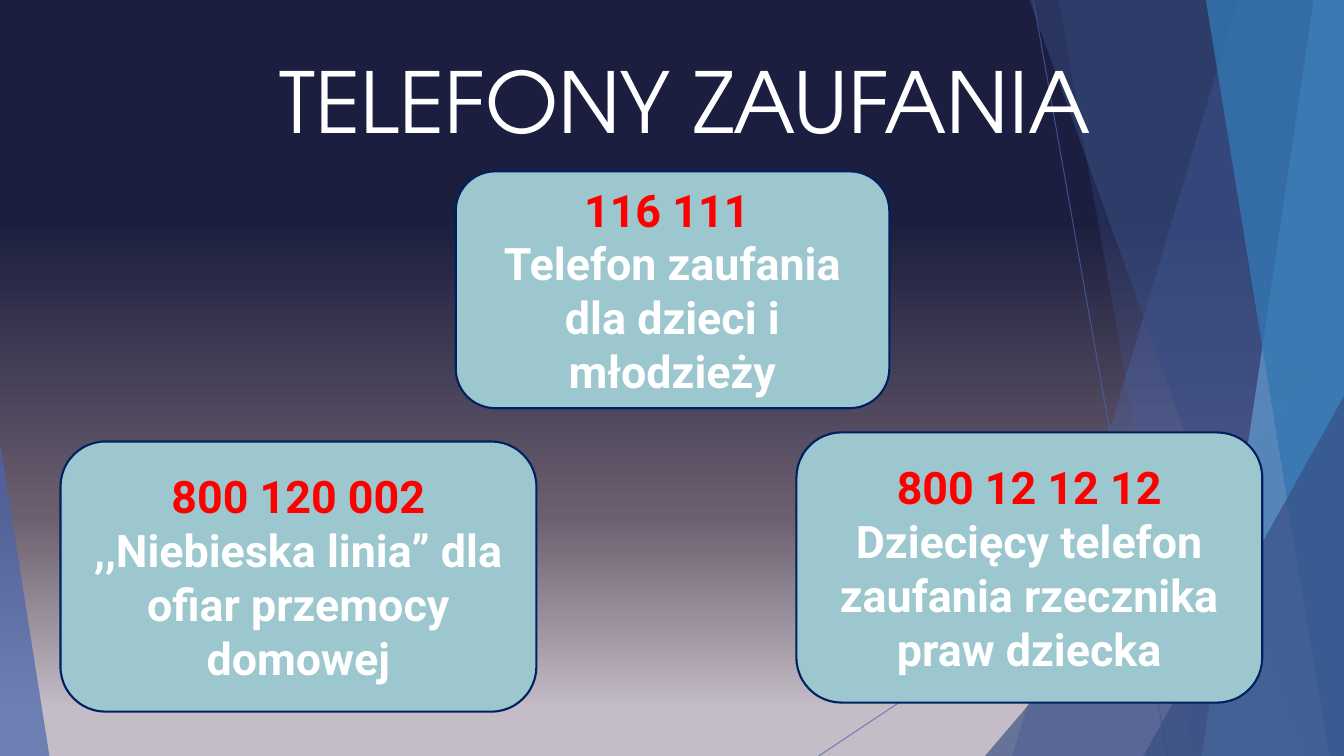
from copy import deepcopy

from lxml.etree import SubElement
from pptx import Presentation
from pptx.dml.color import RGBColor
from pptx.enum.shapes import MSO_CONNECTOR, MSO_SHAPE
from pptx.enum.text import MSO_ANCHOR, MSO_AUTO_SIZE, PP_ALIGN
from pptx.oxml.ns import qn
from pptx.util import Inches, Pt

TITLE = "TELEFONY ZAUFANIA"
TITLE_AREA = (4.65, 5.87, 92.65, 14.8)
HELPLINES = [
    ("116 111 ", "Telefon zaufania dla dzieci i młodzieży", (33.91, 22.67, 32.26, 31.33)),
    ("800 12 12 12", "Dziecięcy telefon zaufania rzecznika praw dziecka", (59.26, 57.2, 34.66, 35.73)),
    ("800 120 002", ",,Niebieska linia” dla ofiar przemocy domowej", (4.5, 58.4, 35.41, 35.73)),
]

BACKGROUND = [(0.06, "C4BCC6"), (0.32, "6B5E6E"), (0.71, "1B1E3E")]
BLUE, NAVY, SKY, OCEAN = "4A66AC", "384C81", "629DD1", "3477B2"
THIN_LINES = [(76.89, 0, 86.87, 100), (100, 53.73, 60.92, 100)]
DECORATIONS = [
    ("panel", (92.12, 75.32), BLUE, 36),
    ("panel", (78.77, 88.75), BLUE, 20),
    ("triangle", (73.29, 44.4, 26.71, 55.6, 1), NAVY, 66),
    ("panel", (76.59, 96.85), NAVY, 50),
    ("panel", (97.75, 89.42), SKY, 70),
    ("panel", (89.72, 98.87), OCEAN, 80),
    ("triangle", (85.07, 52.4, 14.93, 47.6, 1), NAVY, 66),
    ("triangle", (0, 58.53, 3.68, 41.47, 0), BLUE, 70),
]
TITLE_FONT = {"name": "TeX Gyre Adventor", "size": Pt(60)}
CARD_FONT = {"name": "Roboto", "size": Pt(32), "bold": True}

presentation = Presentation()
presentation.slide_width = Inches(13.33)
presentation.slide_height = Inches(7.5)
slide = presentation.slides.add_slide(presentation.slide_layouts[6])
shapes = slide.shapes


def place(*shares):
    sides = (presentation.slide_width, presentation.slide_height)
    return [round(share * sides[index % 2] / 100) for index, share in enumerate(shares)]


def color(hex_string):
    return RGBColor.from_string(hex_string)


def set_alpha(element, percent):
    for tone in element.spPr.iter(qn("a:srgbClr")):
        SubElement(tone, qn("a:alpha"), val=str(percent * 1000))


def paint(shape, fill, line=None):
    shape.shadow.inherit = False
    shape.fill.solid()
    shape.fill.fore_color.rgb = color(fill)
    if line:
        shape.line.color.rgb = color(line)
        shape.line.width = Pt(1.5)
    else:
        shape.line.fill.background()


def write(paragraph, text, font_values, text_color):
    paragraph.alignment = PP_ALIGN.CENTER
    run = paragraph.add_run()
    run.text = text
    for name, value in font_values.items():
        setattr(run.font, name, value)
    run.font.color.rgb = color(text_color)


def add_background():
    fill = slide.background.fill
    fill.gradient()
    fill.gradient_angle = 90
    stop_list = next(slide.element.iter(qn("a:gsLst")))
    stop_list.append(deepcopy(stop_list[0]))
    for stop, (position, hex_string) in zip(fill.gradient_stops, BACKGROUND):
        stop.position = position
        stop.color.rgb = color(hex_string)


def add_thin_line(ends):
    connector = shapes.add_connector(MSO_CONNECTOR.STRAIGHT, *place(*ends))
    connector.line.color.rgb = color(BLUE)
    connector.line.width = Pt(0.75)
    set_alpha(connector.element, 70)
    SubElement(connector.element.spPr, qn("a:effectLst"))


def add_panel(top, bottom):
    builder = shapes.build_freeform(*place(top, 0))
    corners = [(100, 0), (100, 100), (bottom, 100)]
    builder.add_line_segments([place(*corner) for corner in corners], close=True)
    return builder.convert_to_shape()


def add_triangle(left, top, width, height, apex):
    triangle = shapes.add_shape(MSO_SHAPE.ISOSCELES_TRIANGLE, *place(left, top, width, height))
    triangle.adjustments[0] = apex
    return triangle


def add_title():
    frame = shapes.add_textbox(*place(*TITLE_AREA)).text_frame
    frame.word_wrap = True
    frame.auto_size = MSO_AUTO_SIZE.SHAPE_TO_FIT_TEXT
    write(frame.paragraphs[0], TITLE, TITLE_FONT, "FFFFFF")


def add_card(number, description, area):
    card = shapes.add_shape(MSO_SHAPE.ROUNDED_RECTANGLE, *place(*area))
    paint(card, "9CC7CE", "002060")
    frame = card.text_frame
    frame.word_wrap = True
    frame.vertical_anchor = MSO_ANCHOR.MIDDLE
    write(frame.paragraphs[0], number, CARD_FONT, "FF0000")
    write(frame.add_paragraph(), description, CARD_FONT, "FFFFFF")


def main():
    add_background()
    for ends in THIN_LINES:
        add_thin_line(ends)
    builders = {"panel": add_panel, "triangle": add_triangle}
    for kind, geometry, fill, alpha in DECORATIONS:
        decoration = builders[kind](*geometry)
        paint(decoration, fill)
        set_alpha(decoration.element, alpha)
    add_title()
    for helpline in HELPLINES:
        add_card(*helpline)
    presentation.save("out.pptx")


if __name__ == "__main__":
    main()
